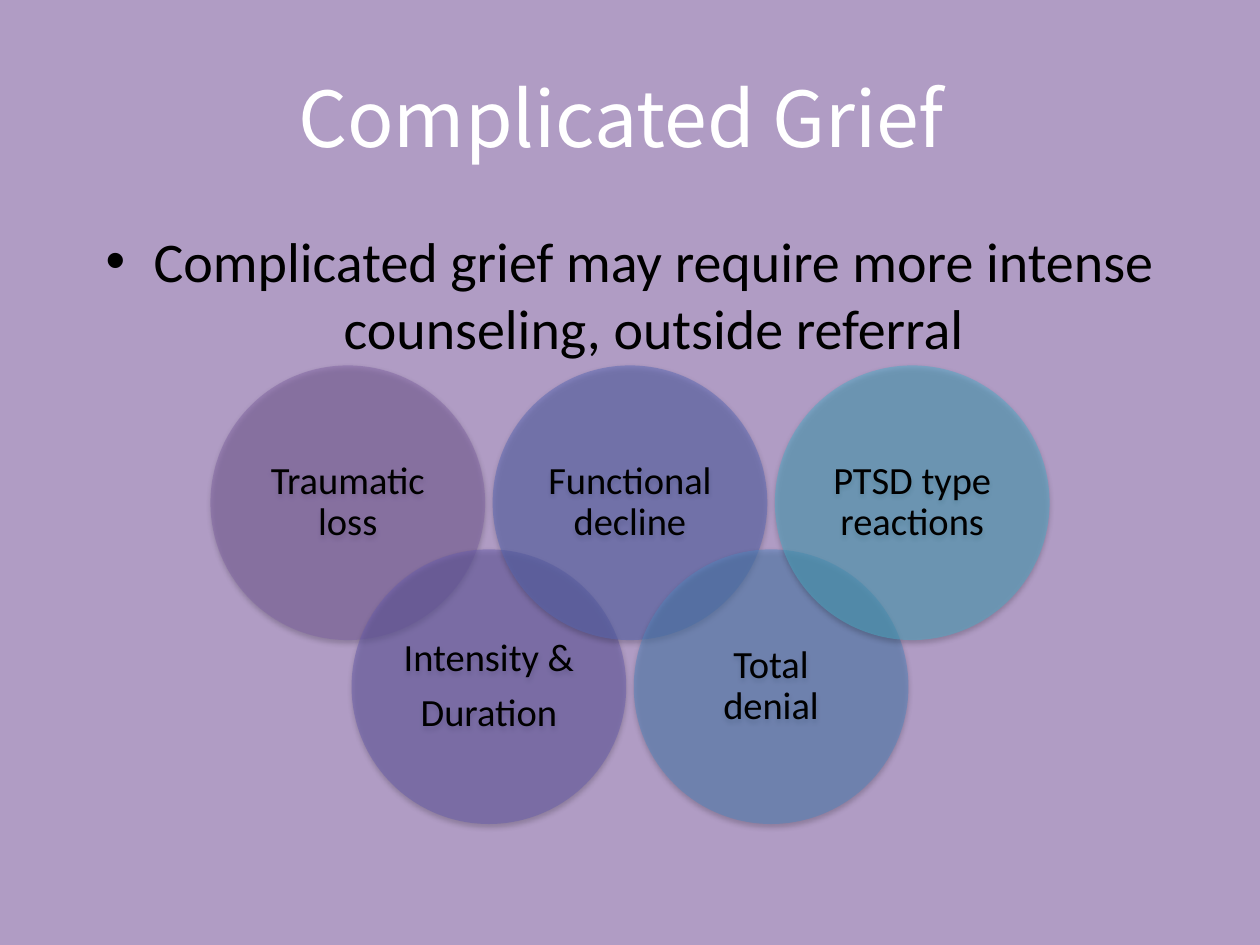
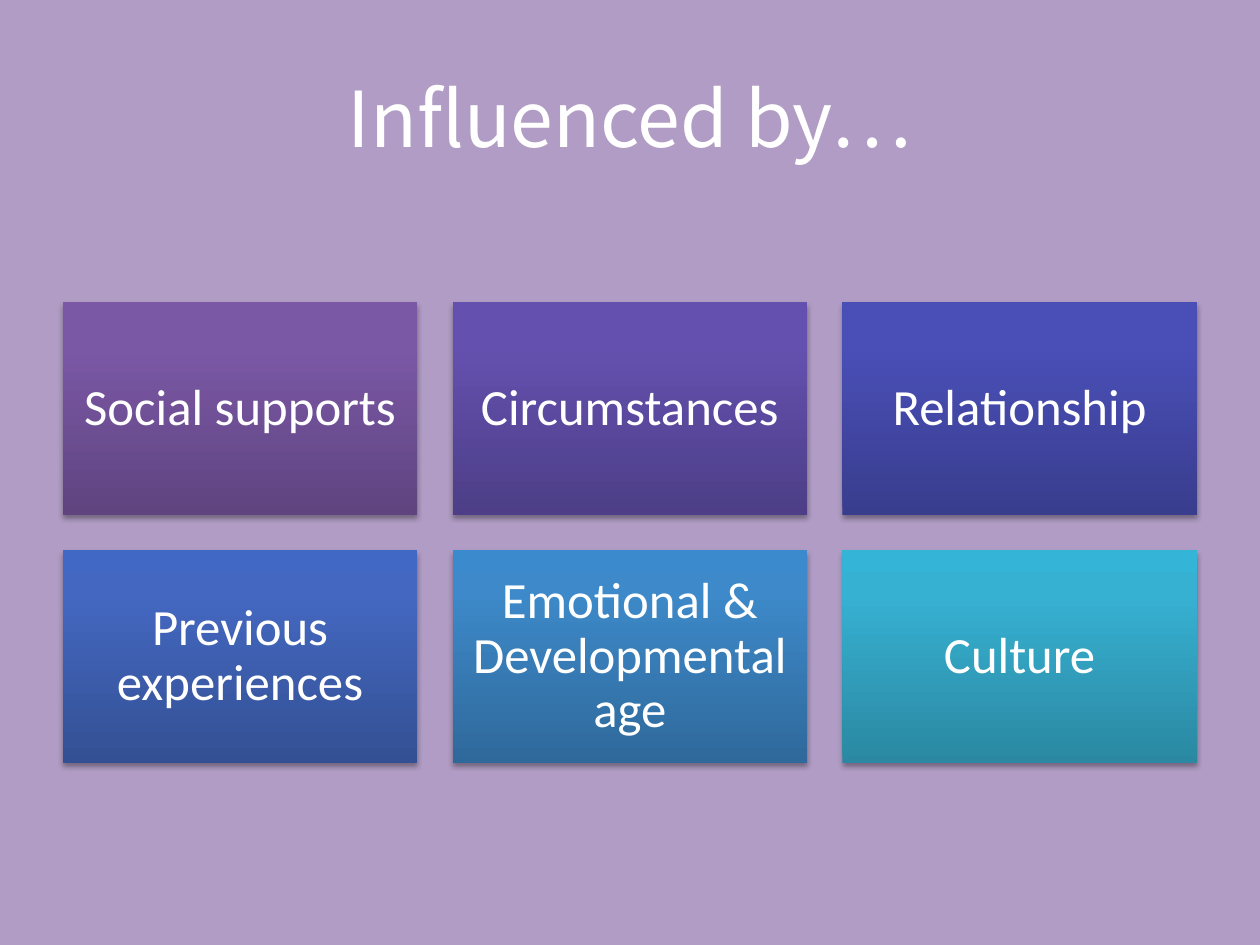
"""Build two slides on complicated grief: overlapping circles and a grid of influences."""
from copy import deepcopy

from lxml.etree import SubElement
from pptx import Presentation
from pptx.dml.color import RGBColor
from pptx.enum.shapes import MSO_SHAPE
from pptx.enum.text import MSO_ANCHOR, PP_ALIGN
from pptx.oxml.ns import qn
from pptx.util import Inches, Pt

W, H = 10, 7.5
MARGIN = W / 20
COLORS = {"background": "B09CC4", "title": "FFFFFF", "body": "000000",
          "circle_text": "000000", "tile_text": "FFFFFF", "shadow": "000000"}
TITLE_FONT, BODY_FONT = "Noto Sans CJK KR", "Calibri"

GRIEF_TITLE = "Complicated Grief "
GRIEF_POINT = "Complicated grief may require more intense counseling, outside referral"
CIRCLES = [
    (["Traumatic loss"], "8064A2"),
    (["Intensity & ", "Duration"], "685DAB"),
    (["Functional decline"], "5767B4"),
    (["Total denial"], "5185BD"),
    (["PTSD type reactions"], "4BACC6"),
]
INFLUENCE_TITLE = "Influenced by…"
INFLUENCES = [
    ("Social supports", ("5F4480", "7B58A6", "7C57A8")),
    ("Circumstances", ("4D3E87", "6451AF", "6450B2")),
    ("Relationship", ("393D8E", "4A4FB8", "484EBB")),
    ("Previous experiences", ("345094", "4468C1", "4168C4")),
    ("Emotional & Developmental age", ("2F699B", "3D89C9", "3B8ACD")),
    ("Culture", ("2A88A2", "37B1D2", "34B4D6")),
]
STOPS = (0, 0.8, 1)
COLUMNS = 3


def rgb(value):
    return RGBColor.from_string(value)


def write(tf, lines, size, color, font=BODY_FONT, anchor=MSO_ANCHOR.MIDDLE, inset=None):
    tf.word_wrap = True
    tf.vertical_anchor = anchor
    if inset is not None:
        tf.margin_left = tf.margin_right = tf.margin_top = tf.margin_bottom = Inches(inset)
    for i, line in enumerate(lines):
        p = tf.paragraphs[0] if i == 0 else tf.add_paragraph()
        p.alignment = PP_ALIGN.CENTER
        r = p.add_run()
        r.text = line
        r.font.size = Pt(size)
        r.font.name = font
        r.font.color.rgb = rgb(COLORS[color])
    return tf.paragraphs


def add_text(s, top, height, lines, size, color, **style):
    box = s.shapes.add_textbox(Inches(MARGIN), Inches(top), Inches(W - 2 * MARGIN), Inches(height))
    return write(box.text_frame, lines, size, color, **style)


def new_slide(prs, title):
    s = prs.slides.add_slide(prs.slide_layouts[6])
    s.background.fill.solid()
    s.background.fill.fore_color.rgb = rgb(COLORS["background"])
    add_text(s, 0.04 * H, H / 6, [title], 44, "title", font=TITLE_FONT)
    return s


def add_bullet(p, indent):
    pPr = p._p.get_or_add_pPr()
    pPr.set("marL", str(Inches(indent)))
    pPr.set("indent", str(-Inches(indent)))
    SubElement(pPr, qn("a:buFont"), typeface="Arial")
    SubElement(pPr, qn("a:buChar"), char="•")


def add_shadow(sp, distance, opacity):
    sp.shadow.inherit = False
    effects = sp._element.spPr.find(qn("a:effectLst"))
    shadow = SubElement(effects, qn("a:outerShdw"), blurRad=str(Pt(3.1)),
                        dist=str(Pt(distance)), dir="5400000", rotWithShape="0")
    color = SubElement(shadow, qn("a:srgbClr"), val=COLORS["shadow"])
    SubElement(color, qn("a:alpha"), val=str(opacity * 1000))


def add_label_shape(s, kind, left, top, width, height, lines, size, color, inset):
    sp = s.shapes.add_shape(kind, Inches(left), Inches(top), Inches(width), Inches(height))
    sp.line.fill.background()
    for p in write(sp.text_frame, lines, size, color, inset=inset):
        p.line_spacing = 0.9
        p.space_after = Pt(0.35 * size)
    return sp


def fill_translucent(sp, color, percent):
    sp.fill.solid()
    sp.fill.fore_color.rgb = rgb(color)
    clr = sp._element.spPr.find(qn("a:solidFill")).find(qn("a:srgbClr"))
    SubElement(clr, qn("a:alpha"), val=str(percent * 1000))


def fill_gradient(sp, colors):
    sp.fill.gradient()
    sp.fill.gradient_angle = 90
    stops = sp._element.spPr.find(qn("a:gradFill")).find(qn("a:gsLst"))
    stops.append(deepcopy(stops[-1]))
    for stop, position, color in zip(sp.fill.gradient_stops, STOPS, colors):
        stop.position = position
        stop.color.rgb = rgb(color)


def grief_slide(prs):
    s = new_slide(prs, GRIEF_TITLE)
    p = add_text(s, 1.75, 4.95, [GRIEF_POINT], 32, "body", anchor=MSO_ANCHOR.TOP)[0]
    p.space_before = Pt(6.4)
    add_bullet(p, 0.38)
    size, step, drop, top = 2.18, 1.12, 1.46, 2.9
    left = (W - size - step * (len(CIRCLES) - 1)) / 2
    for i, (lines, color) in enumerate(CIRCLES):
        sp = add_label_shape(s, MSO_SHAPE.OVAL, left + i * step, top + i % 2 * drop,
                             size, size, lines, 22, "circle_text", 0.09)
        fill_translucent(sp, color, 50)
        add_shadow(sp, 1.6, 38)


def influence_slide(prs):
    s = new_slide(prs, INFLUENCE_TITLE)
    gap, top = 0.28, 2.4
    width = (W - 2 * MARGIN - gap * (COLUMNS - 1)) / COLUMNS
    height = 0.6 * width
    for i, (label, colors) in enumerate(INFLUENCES):
        row, col = divmod(i, COLUMNS)
        sp = add_label_shape(s, MSO_SHAPE.RECTANGLE, MARGIN + col * (width + gap),
                             top + row * (height + gap), width, height,
                             [label], 29, "tile_text", 0.12)
        fill_gradient(sp, colors)
        add_shadow(sp, 1.8, 35)


def main():
    prs = Presentation()
    prs.slide_width, prs.slide_height = Inches(W), Inches(H)
    grief_slide(prs)
    influence_slide(prs)
    prs.save("out.pptx")


if __name__ == "__main__":
    main()
